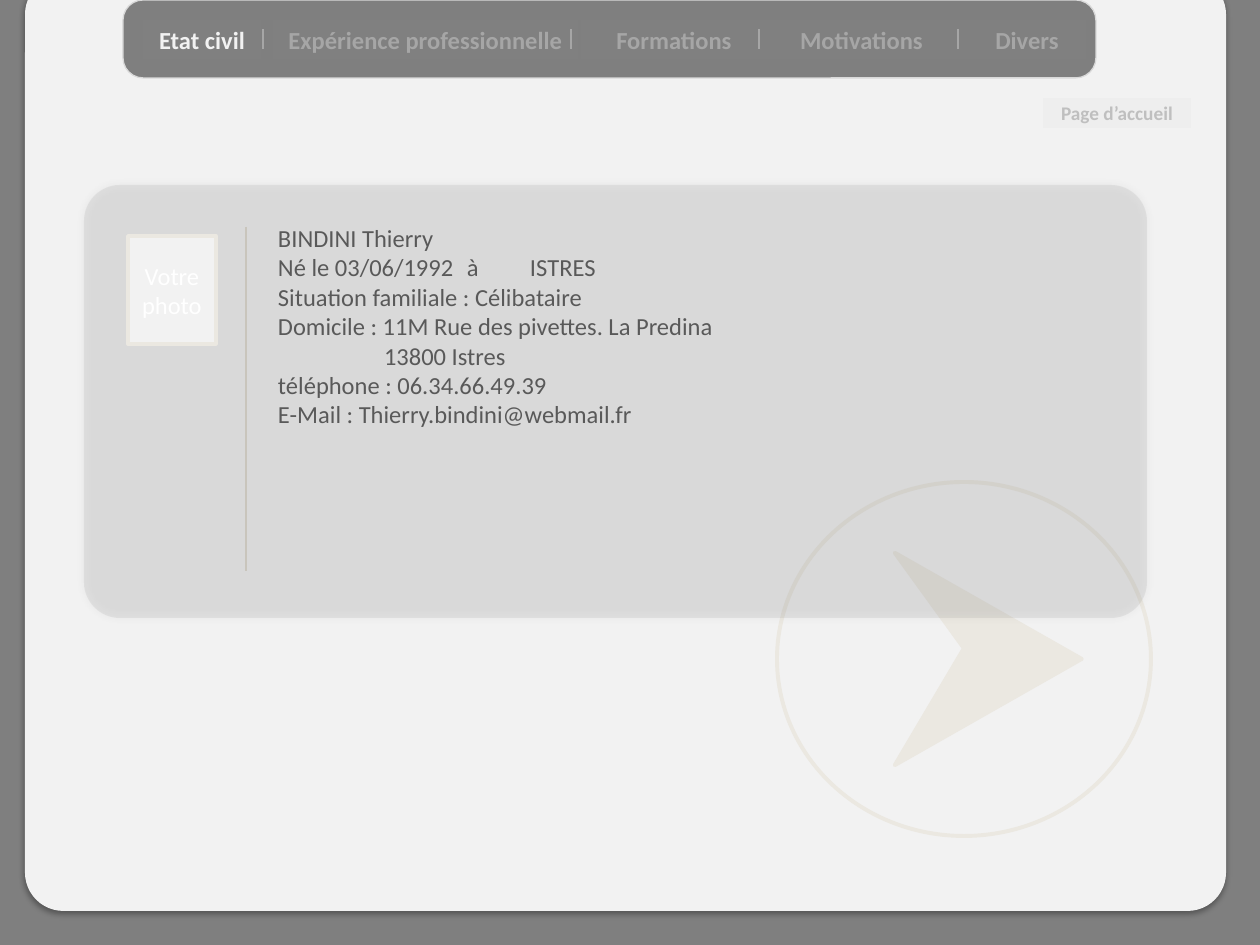
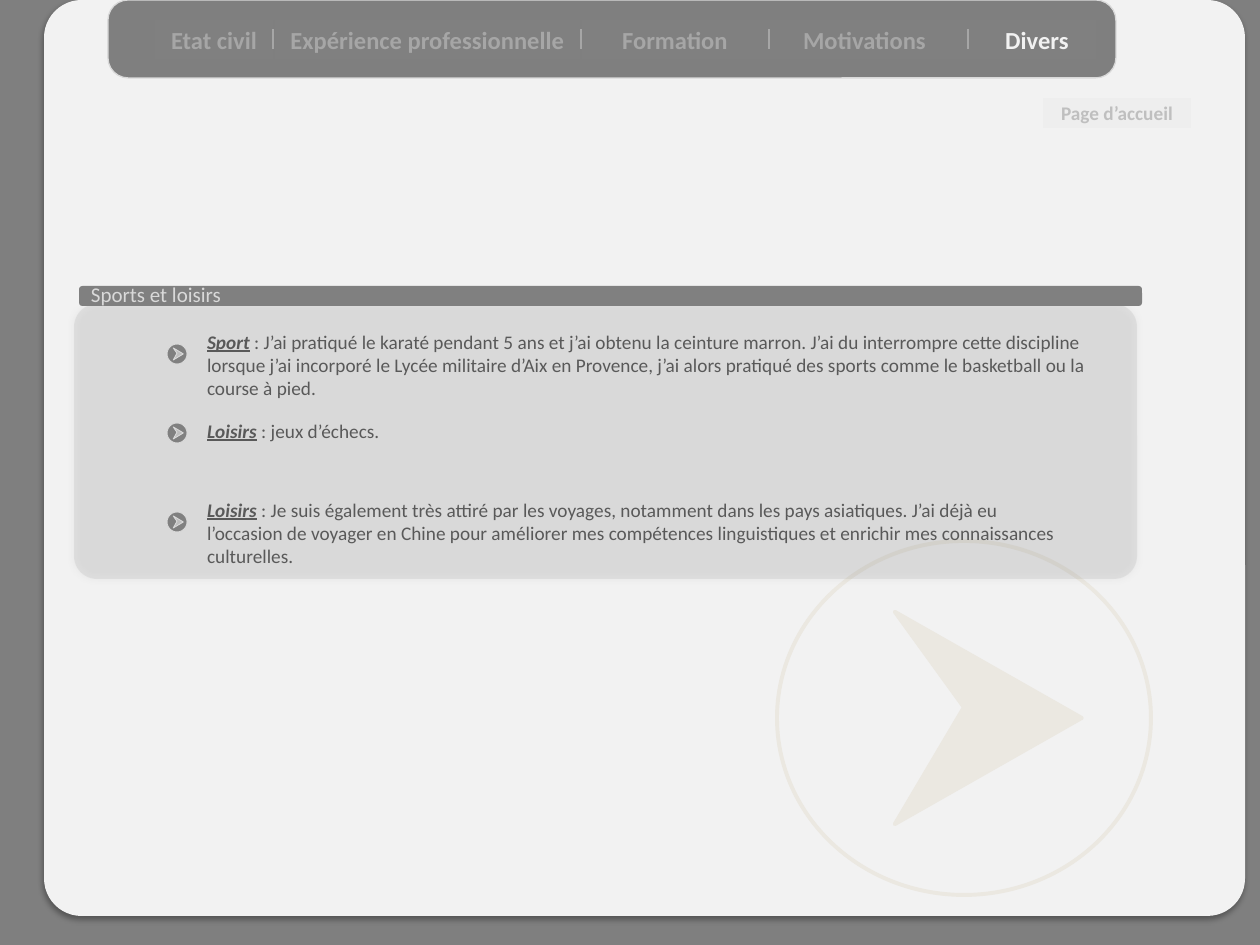
from pptx import Presentation
from pptx import util as u
from pptx.dml.color import RGBColor
from pptx.enum import shapes, text
from pptx.oxml import parse_xml
from pptx.oxml.ns import nsdecls, qn

COLORS = {
    "backdrop": "7F7F7F", "page": "F2F2F2", "bar": "808080", "edge": "D9D9D9",
    "muted": "A6A6A6", "cream": "EBE8E1", "rule": "DFDACF", "ink": "595959",
    "button": "EEEEEE", "faint": "BFBFBF", "white": "FFFFFF",
}
TAB_WIDTHS = [118, 305, 186, 227, 118]
TICKS = [263, 571, 759, 958]
ARROW = [(0.315, 0.2), (0.815, 0.5), (0.315, 0.8), (0.5, 0.47)]
PAGE_SHADOW = dict(alpha=32, blur=3.5, dist=2.2, angle=90)
PANEL_SHADOW = dict(alpha=40, blur=5, dist=0, angle=0)

CIVIL = {
    "layout": 1,
    "page": (25, -24, 1201, 935),
    "nav": (123, 0, 973, 78),
    "tabs": ["Etat civil", "Expérience professionnelle", "Formations", "Motivations", "Divers"],
    "tab_lefts": [143, 273, 581, 748, 968],
    "tick_shift": 0,
    "active": 0,
    "emblem": (777, 482, 374, 354),
    "panel": (84, 185, 1063, 433),
}
DIVERS = {
    "layout": 4,
    "page": (44, 0, 1201, 916),
    "nav": (108, 0, 1008, 78),
    "tabs": ["Etat civil", "Expérience professionnelle", "Formation", "Motivations", "Divers"],
    "tab_lefts": [155, 275, 582, 751, 978],
    "tick_shift": 10,
    "active": 4,
    "emblem": (777, 541, 374, 354),
    "panel": (74, 304, 1063, 275),
}
IDENTITY = [
    ("BINDINI Thierry", 0),
    ("Né le 03/06/1992\tà\tISTRES", 0),
    ("Situation familiale : Célibataire", 0),
    ("Domicile : 11M Rue des pivettes. La Predina", 0),
    ("13800 Istres", 106),
    ("téléphone : 06.34.66.49.39", 0),
    ("E-Mail : Thierry.bindini@webmail.fr", 0),
]
IDENTITY_TABS = [198, 231]
NOTES = [
    ("Sport", " : J’ai pratiqué le karaté pendant 5 ans et j’ai obtenu la ceinture marron. "
     "J’ai du interrompre cette discipline lorsque j’ai incorporé le Lycée militaire d’Aix en "
     "Provence, j’ai alors pratiqué des sports comme le basketball ou la course à pied.",
     (194, 324, 912, 83), 344),
    ("Loisirs", " : jeux d’échecs.", (194, 413, 893, 36), 423),
    ("Loisirs", " : Je suis également très attiré par les voyages, notamment dans les pays "
     "asiatiques. J’ai déjà eu l’occasion de voyager en Chine pour améliorer mes compétences "
     "linguistiques et enrichir mes connaissances culturelles.",
     (194, 492, 883, 83), 512),
]


def px(n):
    return u.Emu(round(n * 914400 / 126))


def rgb(name):
    return RGBColor.from_string(COLORS[name])


def paint(sp, fill=None, line=None, width=0.75):
    if fill:
        sp.fill.solid()
        sp.fill.fore_color.rgb = rgb(fill)
    else:
        sp.fill.background()
    if line:
        sp.line.color.rgb = rgb(line)
        sp.line.width = u.Pt(width)
    else:
        sp.line.fill.background()
    sp.shadow.inherit = False
    return sp


def add_shadow(sp, alpha, blur, dist, angle):
    effects = sp.element.spPr.find(qn("a:effectLst"))
    effects.append(parse_xml(
        f'<a:outerShdw {nsdecls("a")} blurRad="{u.Pt(blur)}" dist="{u.Pt(dist)}" '
        f'dir="{angle * 60000}" algn="ctr" rotWithShape="0">'
        f'<a:srgbClr val="000000"><a:alpha val="{alpha * 1000}"/></a:srgbClr></a:outerShdw>'))


def add_box(s, kind, box, adj=None, **look):
    sp = s.shapes.add_shape(getattr(shapes.MSO_SHAPE, kind), *map(px, box))
    if adj is not None:
        sp.adjustments[0] = adj
    return paint(sp, **look)


def add_rule(s, x, top, bottom, color):
    line = s.shapes.add_connector(shapes.MSO_CONNECTOR.STRAIGHT, *map(px, (x, top, x, bottom)))
    line.line.color.rgb = rgb(color)
    line.line.width = u.Pt(0.75)
    line.element.spPr.append(parse_xml(f'<a:effectLst {nsdecls("a")}/>'))


def add_emblem(s, box, disc, arrow, edge, width):
    x, y, w, h = box
    add_box(s, "OVAL", box, fill=disc, line=edge, width=width)
    points = [(px(x + fx * w), px(y + fy * h)) for fx, fy in ARROW]
    builder = s.shapes.build_freeform(*points[0])
    builder.add_line_segments(points[1:], close=True)
    paint(builder.convert_to_shape(), arrow, edge, width)


def place(s, sp, box):
    sp.left, sp.top, sp.width, sp.height = map(px, box)
    s.shapes.element.append(sp.element)
    return sp


def set_frame(sp, anchor="TOP", margins=(13, 6)):
    tf = sp.text_frame
    side, end = map(px, margins)
    settings = dict(word_wrap=True, auto_size=text.MSO_AUTO_SIZE.NONE,
                    vertical_anchor=getattr(text.MSO_ANCHOR, anchor),
                    margin_left=side, margin_right=side, margin_top=end, margin_bottom=end)
    for key, value in settings.items():
        setattr(tf, key, value)
    return tf


def write(p, runs, size, color, align="LEFT", indent=0):
    p.alignment = getattr(text.PP_ALIGN, align)
    p.space_before = u.Pt(0)
    pPr = p._p.get_or_add_pPr()
    pPr.set("marL", str(px(indent)))
    pPr.set("indent", "0")
    pPr.append(parse_xml(f'<a:buNone {nsdecls("a")}/>'))
    for words, style in runs:
        r = p.add_run()
        r.text = words
        r.font.color.rgb = rgb(color)
        font = dict(name="Calibri", size=u.Pt(size), bold=False, italic=False, underline=False)
        for key, value in (font | style).items():
            setattr(r.font, key, value)


def add_label(sp, words, size, color, bold=True):
    tf = set_frame(sp, "MIDDLE", (0, 0))
    write(tf.paragraphs[0], [(words, dict(bold=bold))], size, color, "CENTER")


def start_slide(prs, view):
    s = prs.slides.add_slide(prs.slide_layouts[view["layout"]])
    add_box(s, "RECTANGLE", (0, 0, 1260, 945), fill="backdrop")
    page = add_box(s, "ROUNDED_RECTANGLE", view["page"], 0.041, fill="page")
    add_shadow(page, **PAGE_SHADOW)
    add_emblem(s, view["emblem"], None, "cream", "cream", 2.25)
    return s


def add_panel(s, box):
    panel = add_box(s, "ROUNDED_RECTANGLE", box, 0.083, fill="backdrop")
    color = panel.element.spPr.find(qn("a:solidFill"))[0]
    color.append(parse_xml(f'<a:alpha {nsdecls("a")} val="12000"/>'))
    add_shadow(panel, **PANEL_SHADOW)


def add_navigation(s, view):
    add_box(s, "ROUNDED_RECTANGLE", view["nav"], 0.259, fill="backdrop", line="edge")
    for i, (name, left, width) in enumerate(zip(view["tabs"], view["tab_lefts"], TAB_WIDTHS)):
        box = (left, 20, width, 39)
        active = i == view["active"]
        if active:
            tab = place(s, s.shapes.title, box)
            tab.fill.solid()
            tab.fill.fore_color.rgb = rgb("bar")
        else:
            tab = add_box(s, "RECTANGLE", box, fill="bar")
        add_label(tab, name, 14, "page" if active else "muted")
    for x in TICKS:
        add_rule(s, x + view["tick_shift"], 29, 49, "muted")
    home = add_box(s, "RECTANGLE", (1043, 98, 148, 30), fill="button")
    add_label(home, "Page d’accueil", 11, "faint")


def build_civil(prs):
    s = start_slide(prs, CIVIL)
    tf = set_frame(place(s, s.placeholders[1], (265, 217, 630, 390)))
    for i, (words, indent) in enumerate(IDENTITY):
        p = tf.paragraphs[0] if i == 0 else tf.add_paragraph()
        write(p, [(words, {})], 14, "ink", indent=indent)
        if "\t" in words:
            stops = "".join(f'<a:tab pos="{px(x)}" algn="l"/>' for x in IDENTITY_TABS)
            p._p.pPr.append(parse_xml(f'<a:tabLst {nsdecls("a")}>{stops}</a:tabLst>'))
    add_rule(s, 246, 227, 571, "rule")
    add_panel(s, CIVIL["panel"])
    photo = add_box(s, "RECTANGLE", (128, 236, 88, 108), fill="page", line="cream", width=2)
    add_label(photo, "Votre photo", 14, "white", False)
    add_navigation(s, CIVIL)


def build_divers(prs):
    s = start_slide(prs, DIVERS)
    add_panel(s, DIVERS["panel"])
    add_box(s, "ROUNDED_RECTANGLE", (79, 286, 1063, 20), fill="bar")
    heading = s.shapes.add_textbox(*map(px, (78, 276, 433, 38)))
    write(set_frame(heading).paragraphs[0], [("Sports et loisirs", {})], 12, "edge")
    add_navigation(s, DIVERS)
    for idx, (topic, words, box, bullet_top) in enumerate(NOTES, 1):
        add_emblem(s, (167, bullet_top, 20, 20), "bar", "faint", "edge", 0.5)
        tf = set_frame(place(s, s.placeholders[idx], box))
        strong = dict(bold=True, italic=True, underline=True)
        write(tf.paragraphs[0], [(topic, strong), (words, {})], 11, "ink")
    spare = s.placeholders[4].element
    spare.getparent().remove(spare)


def main():
    prs = Presentation()
    prs.slide_width, prs.slide_height = px(1260), px(945)
    build_civil(prs)
    build_divers(prs)
    prs.save("out.pptx")


if __name__ == "__main__":
    main()
